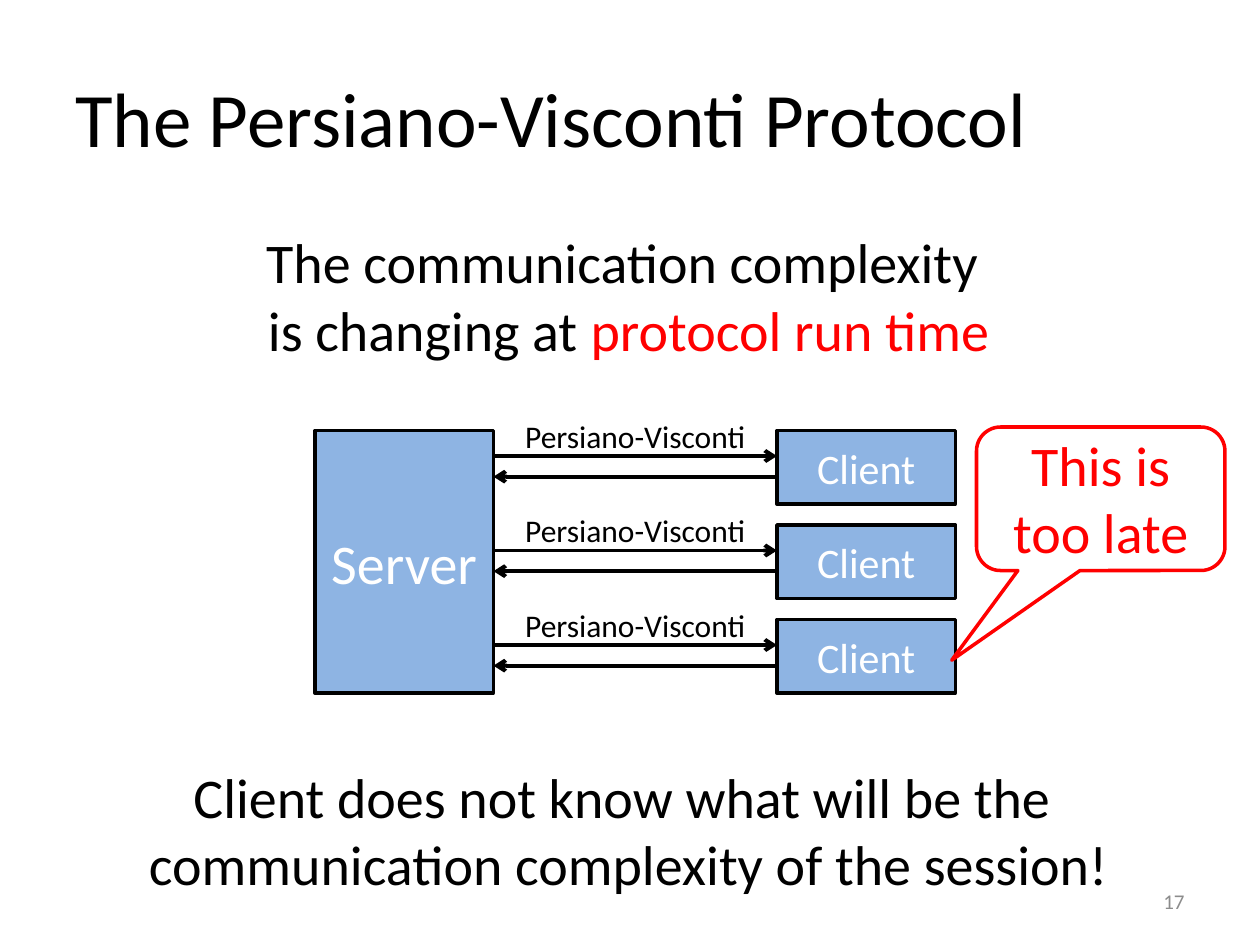
from lxml import etree
from pptx import Presentation
from pptx.dml.color import RGBColor
from pptx.enum.shapes import MSO_CONNECTOR, MSO_SHAPE
from pptx.enum.text import MSO_ANCHOR, MSO_AUTO_SIZE, PP_ALIGN
from pptx.oxml.ns import qn
from pptx.util import Pt

LEFT, CENTER, RIGHT = PP_ALIGN.LEFT, PP_ALIGN.CENTER, PP_ALIGN.RIGHT
TOP, MIDDLE = MSO_ANCHOR.TOP, MSO_ANCHOR.MIDDLE
FIT_SHAPE = MSO_AUTO_SIZE.SHAPE_TO_FIT_TEXT
RECTANGLE = MSO_SHAPE.RECTANGLE
CALLOUT = MSO_SHAPE.ROUNDED_RECTANGULAR_CALLOUT
STRAIGHT = MSO_CONNECTOR.STRAIGHT

FONT = "Calibri"
BLACK, WHITE, RED, BLUE, GRAY = "000000", "FFFFFF", "FF0000", "8EB4E3", "8C8C8C"

# Each text is a list of paragraphs, each paragraph a list of (text, colour).
TITLE = [[("The Persiano-Visconti Protocol", BLACK)]]
CLAIM = [
    [("The communication complexity ", BLACK)],
    [("is changing at ", BLACK), ("protocol run time", RED)],
]
CONCLUSION = [[("Client does not know what will be the \n"
                "communication complexity of the session!", BLACK)]]
REMARK = [[("This is too late", RED)]]
SERVER = [[("Server", WHITE)]]
CLIENTS = ["Client", "Client", "Client"]
PROTOCOL = [[("Persiano-Visconti", BLACK)]]
PAGE_NUMBER = [[("17", GRAY)]]

# Diagram layout
SERVER_LEFT, CLIENT_LEFT, DIAGRAM_TOP = 180, 444, 246
BOX_WIDTH, CLIENT_HEIGHT, ROW_PITCH = 102, 42, 54
SERVER_RIGHT = SERVER_LEFT + BOX_WIDTH
SERVER_HEIGHT = ROW_PITCH * (len(CLIENTS) - 1) + CLIENT_HEIGHT
REQUEST_OFFSET, REPLY_OFFSET, LABEL_OFFSET = 14.6, 26.4, -11.3
CALLOUT_ADJUSTMENTS = (-0.6, 1.125, 0.167)


def color(hex_string):
    return RGBColor.from_string(hex_string)


def write(frame, paragraphs, size, align=CENTER, anchor=MIDDLE):
    frame.word_wrap = True
    frame.vertical_anchor = anchor
    for index, pieces in enumerate(paragraphs):
        paragraph = frame.add_paragraph() if index else frame.paragraphs[0]
        paragraph.text = "".join(text for text, _ in pieces[:1])
        for text, _ in pieces[1:]:
            paragraph.add_run().text = text
        paragraph.alignment = align
        paragraph.font.size = Pt(size)
        colors = [hex_string for _, hex_string in pieces]
        for position, run in enumerate(paragraph.runs):
            run.font.name = FONT
            run.font.size = Pt(size)
            run.font.color.rgb = color(colors[min(position, len(colors) - 1)])


def add_text(slide, box, paragraphs, size, align=CENTER, anchor=TOP):
    frame = slide.shapes.add_textbox(*map(Pt, box)).text_frame
    write(frame, paragraphs, size, align, anchor)
    if anchor == TOP:
        frame.auto_size = FIT_SHAPE


def add_outlined(slide, kind, box, line_color, fill_color=None):
    shape = slide.shapes.add_shape(kind, *map(Pt, box))
    shape.shadow.inherit = False
    if fill_color:
        shape.fill.solid()
        shape.fill.fore_color.rgb = color(fill_color)
    else:
        shape.fill.background()
    shape.line.color.rgb = color(line_color)
    shape.line.width = Pt(2)
    return shape


def add_box(slide, box, paragraphs, size):
    shape = add_outlined(slide, RECTANGLE, box, BLACK, BLUE)
    write(shape.text_frame, paragraphs, size)


def add_arrow(slide, start, end, y):
    arrow = slide.shapes.add_connector(STRAIGHT, Pt(start), Pt(y), Pt(end), Pt(y))
    arrow.line.color.rgb = color(BLACK)
    arrow.line.width = Pt(2.25)
    etree.SubElement(arrow.line._get_or_add_ln(), qn("a:tailEnd"), type="arrow")
    etree.SubElement(arrow._element.spPr, qn("a:effectLst"))


def add_diagram(slide):
    add_box(slide, (SERVER_LEFT, DIAGRAM_TOP, BOX_WIDTH, SERVER_HEIGHT), SERVER, 32)
    for row, client in enumerate(CLIENTS):
        top = DIAGRAM_TOP + row * ROW_PITCH
        add_arrow(slide, SERVER_RIGHT, CLIENT_LEFT, top + REQUEST_OFFSET)
        add_arrow(slide, CLIENT_LEFT, SERVER_RIGHT, top + REPLY_OFFSET)
        add_box(slide, (CLIENT_LEFT, top, BOX_WIDTH, CLIENT_HEIGHT),
                [[(client, WHITE)]], 24)
        add_text(slide, (SERVER_RIGHT, top + LABEL_OFFSET,
                         CLIENT_LEFT - SERVER_RIGHT, 29), PROTOCOL, 18)


def add_remark(slide):
    callout = add_outlined(slide, CALLOUT, (558, 244, 142, 82), RED)
    for index, value in enumerate(CALLOUT_ADJUSTMENTS):
        callout.adjustments[index] = value
    add_text(slide, (558, 242.6, 142, 85), REMARK, 32)


def main():
    presentation = Presentation()
    presentation.slide_width, presentation.slide_height = Pt(720), Pt(540)
    slide = presentation.slides.add_slide(presentation.slide_layouts[6])
    add_text(slide, (36, 21.6, 648, 90), TITLE, 44, LEFT, MIDDLE)
    add_diagram(slide)
    add_remark(slide)
    add_text(slide, (-1.5, 126.7, 721.5, 85), CLAIM, 32)
    add_text(slide, (-1.5, 432, 721.5, 85), CONCLUSION, 32)
    add_text(slide, (516, 500.5, 168, 28.8), PAGE_NUMBER, 12, RIGHT, MIDDLE)
    presentation.save("out.pptx")


if __name__ == "__main__":
    main()
